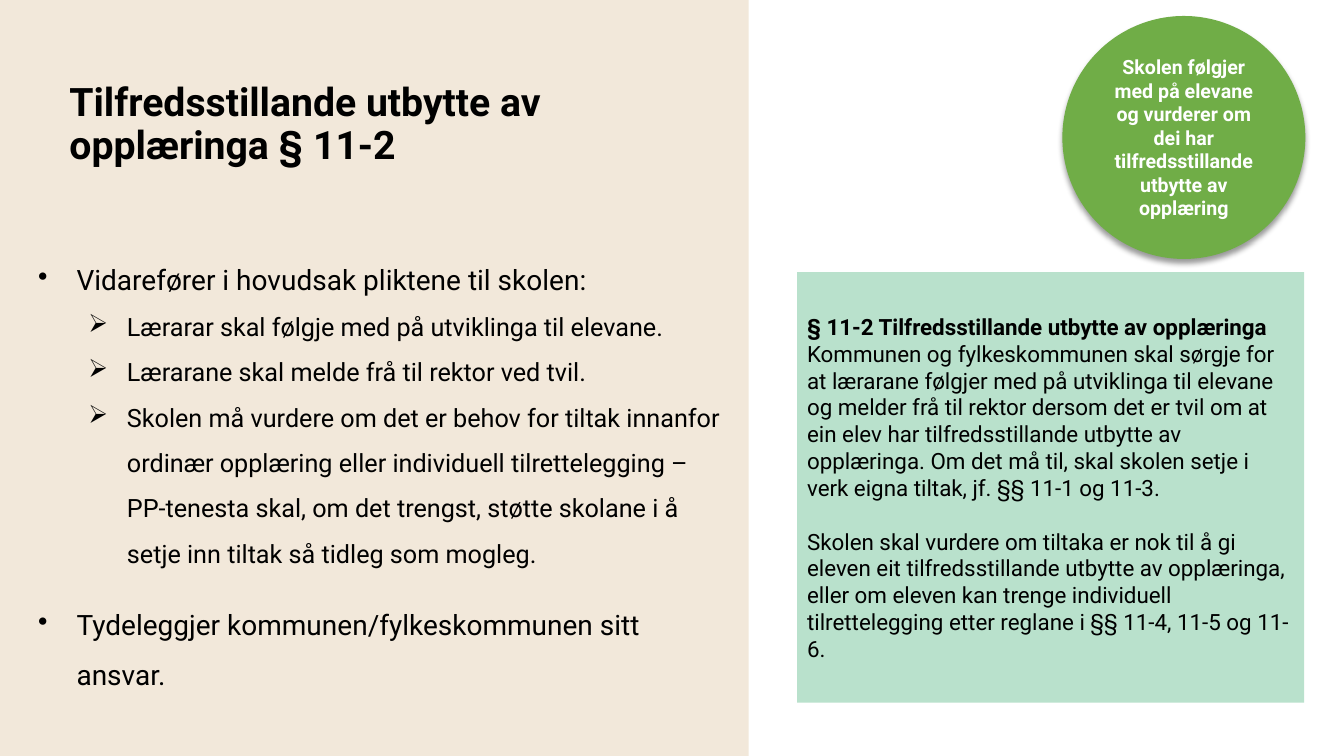
from dataclasses import dataclass

from lxml import etree
from pptx import Presentation
from pptx.dml.color import RGBColor
from pptx.enum.shapes import MSO_SHAPE
from pptx.enum.text import MSO_ANCHOR, PP_ALIGN
from pptx.oxml.ns import qn
from pptx.shapes.autoshape import Shape
from pptx.slide import Slide
from pptx.text.text import TextFrame
from pptx.util import Cm, Pt

RECTANGLE = MSO_SHAPE.RECTANGLE
CIRCLE = MSO_SHAPE.FLOWCHART_CONNECTOR
TOP, MIDDLE = MSO_ANCHOR.TOP, MSO_ANCHOR.MIDDLE
LEFT, CENTER = PP_ALIGN.LEFT, PP_ALIGN.CENTER

SAND = RGBColor(0xF2, 0xE8, 0xDA)
MINT = RGBColor(0xB9, 0xE1, 0xCC)
GREEN = RGBColor(0x70, 0xAD, 0x47)
BLACK = RGBColor(0, 0, 0)
WHITE = RGBColor(0xFF, 0xFF, 0xFF)

FONT = "Roboto"
HANGING = Cm(0.97)


@dataclass(frozen=True)
class Box:
    """Left, top, width and height in centimetres."""
    left: float
    top: float
    width: float
    height: float

    def lengths(self) -> tuple[Cm, Cm, Cm, Cm]:
        return Cm(self.left), Cm(self.top), Cm(self.width), Cm(self.height)


@dataclass(frozen=True)
class Line:
    """One paragraph with its look."""
    text: str
    size: float
    bold: bool = False
    color: RGBColor = BLACK
    align: PP_ALIGN = LEFT
    spacing: float = 1.0
    before: float = 0
    bullet: str = ""
    indent: float = 0


def point(text: str, before: float = 0) -> Line:
    return Line(text, 20, spacing=1.5, before=before, bullet="•", indent=0.97)


def subpoint(text: str) -> Line:
    return Line(text, 18, spacing=1.5, bullet="➢", indent=2.24)


TITLE = [Line("Tilfredsstillande utbytte av opplæringa § 11-2", 28, bold=True, spacing=0.9)]
DUTIES = [
    point("Vidarefører i hovudsak pliktene til skolen:"),
    subpoint("Lærarar skal følgje med på utviklinga til elevane."),
    subpoint("Lærarane skal melde frå til rektor ved tvil."),
    subpoint(
        "Skolen må vurdere om det er behov for tiltak innanfor ordinær opplæring "
        "eller individuell tilrettelegging – PP-tenesta skal, om det trengst, støtte "
        "skolane i å setje inn tiltak så tidleg som mogleg."
    ),
    point("Tydeleggjer kommunen/fylkeskommunen sitt ansvar.", before=16),
]
LAW = [
    Line("§ 11-2 Tilfredsstillande utbytte av opplæringa", 16, bold=True),
    Line(
        "Kommunen og fylkeskommunen skal sørgje for at lærarane følgjer med på "
        "utviklinga til elevane og melder frå til rektor dersom det er tvil om at ein "
        "elev har tilfredsstillande utbytte av opplæringa. Om det må til, skal skolen "
        "setje i verk eigna tiltak, jf. §§ 11-1 og 11-3.", 16,
    ),
    Line(
        "Skolen skal vurdere om tiltaka er nok til å gi eleven eit tilfredsstillande "
        "utbytte av opplæringa, eller om eleven kan trenge individuell tilrettelegging "
        "etter reglane i §§ 11-4, 11-5 og 11-6.", 16, before=19,
    ),
]
SUMMARY = [Line(
    "Skolen følgjer med på elevane og vurderer om dei har tilfredsstillande utbytte "
    "av opplæring", 14, bold=True, color=WHITE, align=CENTER,
)]


def write(frame: TextFrame, lines: list[Line], anchor: MSO_ANCHOR) -> None:
    frame.word_wrap = True
    frame.vertical_anchor = anchor
    for index, line in enumerate(lines):
        paragraph = frame.add_paragraph() if index else frame.paragraphs[0]
        paragraph.text = line.text
        paragraph.alignment = line.align
        paragraph.line_spacing = line.spacing
        paragraph.space_before = Pt(line.before)
        font = paragraph.font
        font.name, font.size, font.bold = FONT, Pt(line.size), line.bold
        font.color.rgb = line.color
        if line.bullet:
            properties = paragraph._p.get_or_add_pPr()
            properties.set("marL", str(Cm(line.indent)))
            properties.set("indent", str(-HANGING))
            bullet = etree.Element(qn("a:buChar"), char=line.bullet)
            properties.find(qn("a:defRPr")).addprevious(bullet)


def add_text(slide: Slide, box: Box, lines: list[Line], anchor: MSO_ANCHOR) -> None:
    write(slide.shapes.add_textbox(*box.lengths()).text_frame, lines, anchor)


def add_filled(slide: Slide, kind: MSO_SHAPE, box: Box, color: RGBColor) -> Shape:
    shape = slide.shapes.add_shape(kind, *box.lengths())
    shape.shadow.inherit = False
    shape.fill.solid()
    shape.fill.fore_color.rgb = color
    shape.line.fill.background()
    return shape


def add_drop_shadow(shape: Shape) -> None:
    effects = shape._element.spPr.find(qn("a:effectLst"))
    shadow = etree.SubElement(
        effects, qn("a:outerShdw"), blurRad=str(Pt(4)), dist=str(Pt(3)),
        dir="5400000", rotWithShape="0",
    )
    black = etree.SubElement(shadow, qn("a:srgbClr"), val=str(BLACK))
    etree.SubElement(black, qn("a:alpha"), val="40000")


def main() -> None:
    presentation = Presentation()
    presentation.slide_width, presentation.slide_height = Cm(33.87), Cm(19.05)
    slide = presentation.slides.add_slide(presentation.slide_layouts[6])

    add_filled(slide, RECTANGLE, Box(0, 0, 18.87, 19.05), SAND)
    add_text(slide, Box(1.5, 1.32, 15.9, 3.68), TITLE, MIDDLE)
    add_text(slide, Box(0.71, 6.07, 17.78, 11.46), DUTIES, TOP)

    law_panel = add_filled(slide, RECTANGLE, Box(20.09, 6.86, 12.78, 10.85), MINT)
    write(law_panel.text_frame, LAW, MIDDLE)

    summary_circle = add_filled(slide, CIRCLE, Box(26.8, 0.43, 6.07, 6.07), GREEN)
    summary_circle.line.color.rgb = GREEN
    summary_circle.line.width = Pt(1.5)
    add_drop_shadow(summary_circle)
    write(summary_circle.text_frame, SUMMARY, MIDDLE)

    presentation.save("out.pptx")


if __name__ == "__main__":
    main()
